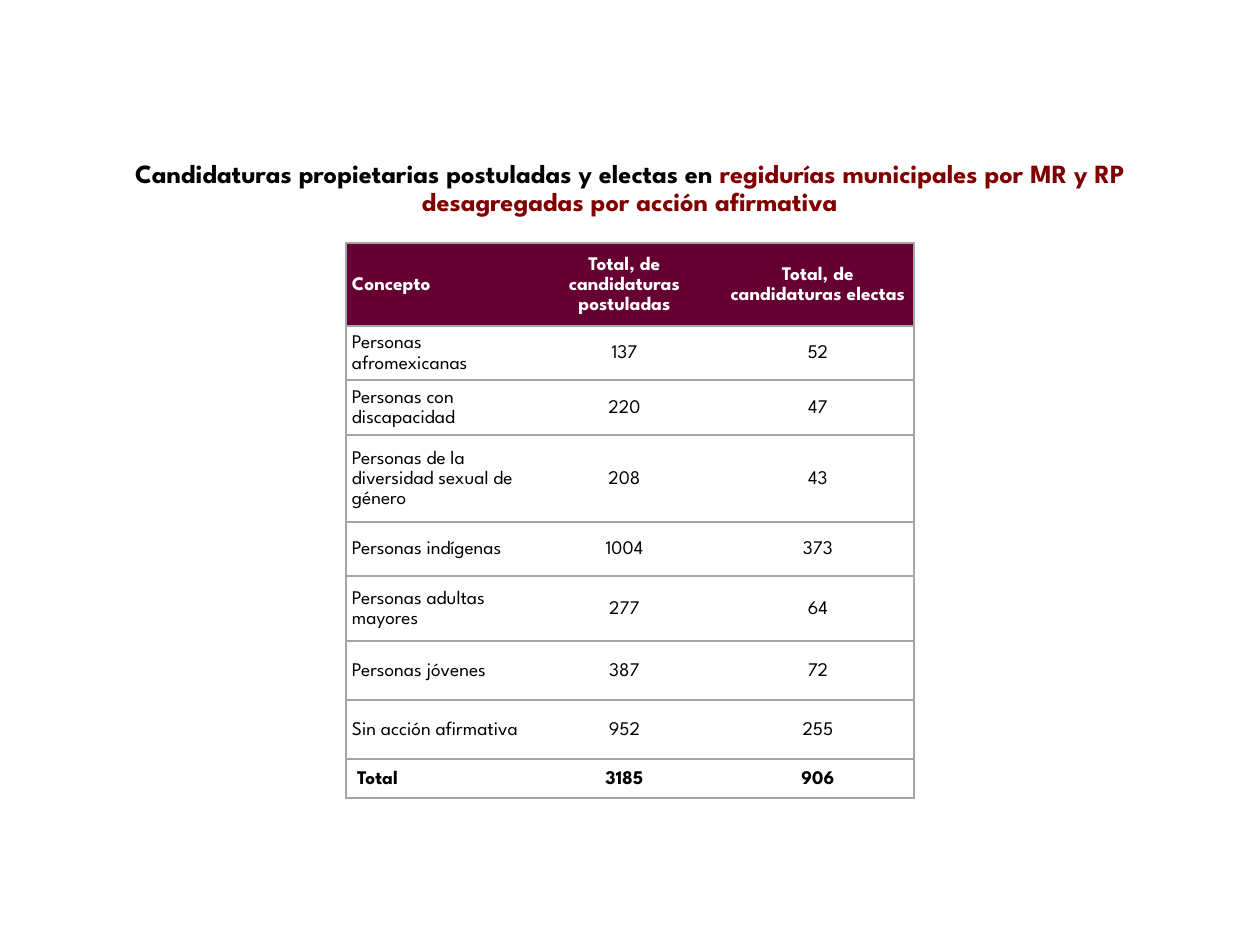
import pptx
import pptx.dml.color
import pptx.enum.text
import pptx.oxml
import pptx.oxml.ns
import pptx.util

EMU_PER_PX = 914400 // 126
FONT = "League Spartan"
BLACK, WHITE, RED = "000000", "FFFFFF", "800000"
WINE, GREY = "660033", "A5A5A5"
ALIGN = pptx.enum.text.PP_ALIGN
ANCHOR = pptx.enum.text.MSO_ANCHOR

COLUMNS = [
    {"width": 181, "align": ALIGN.LEFT, "borders": "LTB"},
    {"width": 195, "align": ALIGN.CENTER, "borders": "TB"},
    {"width": 192, "align": ALIGN.CENTER, "borders": "RTB"},
]
HEADER_STYLE = {"background": WINE, "color": WHITE, "bold": True}
BODY_STYLE = {"background": WHITE, "color": BLACK, "bold": False}
TOTAL_STYLE = {"background": WHITE, "color": BLACK, "bold": True}

HEADER = (83, "Concepto", "Total, de candidaturas postuladas", "Total, de candidaturas electas")
BODY = [
    (54, "Personas afromexicanas", "137", "52"),
    (55, "Personas con discapacidad", "220", "47"),
    (87, "Personas de la diversidad sexual de género", "208", "43"),
    (54, "Personas indígenas", "1004", "373"),
    (65, "Personas adultas mayores", "277", "64"),
    (59, "Personas jóvenes", "387", "72"),
    (59, "Sin acción afirmativa", "952", "255"),
]
TOTAL = (39, " Total", "3185", "906")


def px(length):
    """Turn whole pixels into EMU."""
    return pptx.util.Emu(length * EMU_PER_PX)


def rgb(value):
    """Turn a hex string into a colour."""
    return pptx.dml.color.RGBColor.from_string(value)


def add_span(para, text, *, size, color, bold):
    """Append formatted text to a paragraph."""
    span = para.add_run()
    span.text = text
    span.font.name = FONT
    span.font.size = pptx.util.Pt(size)
    span.font.bold = bold
    span.font.color.rgb = rgb(color)


def set_borders(cell, visible):
    """Draw the visible sides of a cell and hide the others."""
    properties = cell._tc.get_or_add_tcPr()
    namespace = pptx.oxml.ns.nsdecls("a")
    solid = f'<a:solidFill><a:srgbClr val="{GREY}"/></a:solidFill>'
    for index, side in enumerate("LRTB"):
        paint = solid if side in visible else "<a:noFill/>"
        line = f'<a:ln{side} {namespace} w="12700">{paint}</a:ln{side}>'
        properties.insert(index, pptx.oxml.parse_xml(line))


def write_cell(cell, text, *, align, borders, background, color, bold):
    """Fill, border and write one table cell."""
    cell.fill.solid()
    cell.fill.fore_color.rgb = rgb(background)
    set_borders(cell, borders)
    cell.vertical_anchor = ANCHOR.MIDDLE
    cell.margin_left = cell.margin_right = px(6)
    cell.margin_top = cell.margin_bottom = 0
    para = cell.text_frame.paragraphs[0]
    para.alignment = align
    para.line_spacing = 1.15
    add_span(para, text, size=11, color=color, bold=bold)


def add_title(page):
    """Place and write the two-colour title."""
    box = page.shapes.title
    box.left, box.top, box.width, box.height = px(119), px(117), px(1022), px(100)
    frame = box.text_frame
    frame.word_wrap = True
    frame.auto_size = pptx.enum.text.MSO_AUTO_SIZE.NONE
    frame.vertical_anchor = ANCHOR.BOTTOM
    frame.margin_bottom = 0
    para = frame.paragraphs[0]
    para.alignment = ALIGN.CENTER
    para.line_spacing = pptx.util.Pt(16)
    for text, color in (
        ("Candidaturas propietarias postuladas y electas en ", BLACK),
        ("regidurías municipales por MR y RP desagregadas por acción afirmativa", RED),
    ):
        add_span(para, text, size=15, color=color, bold=True)


def add_results_table(page):
    """Add the table of candidacies by affirmative action."""
    rows = [HEADER, *BODY, TOTAL]
    styles = [HEADER_STYLE, *[BODY_STYLE] * len(BODY), TOTAL_STYLE]
    width = sum(column["width"] for column in COLUMNS)
    height = sum(row[0] for row in rows)
    table = page.shapes.add_table(
        len(rows), len(COLUMNS), px(346), px(243), px(width), px(height)
    ).table
    table.horz_banding = False
    for table_column, column in zip(table.columns, COLUMNS):
        table_column.width = px(column["width"])
    for table_row, (row_height, *texts), style in zip(table.rows, rows, styles):
        table_row.height = px(row_height)
        for cell, text, column in zip(table_row.cells, texts, COLUMNS):
            write_cell(cell, text, align=column["align"], borders=column["borders"], **style)


def main():
    """Build and save the slide."""
    deck = pptx.Presentation()
    deck.slide_width, deck.slide_height = px(1260), px(945)
    title_only = deck.slide_layouts[5]
    page = deck.slides.add_slide(title_only)
    add_title(page)
    add_results_table(page)
    deck.save("out.pptx")


if __name__ == "__main__":
    main()
